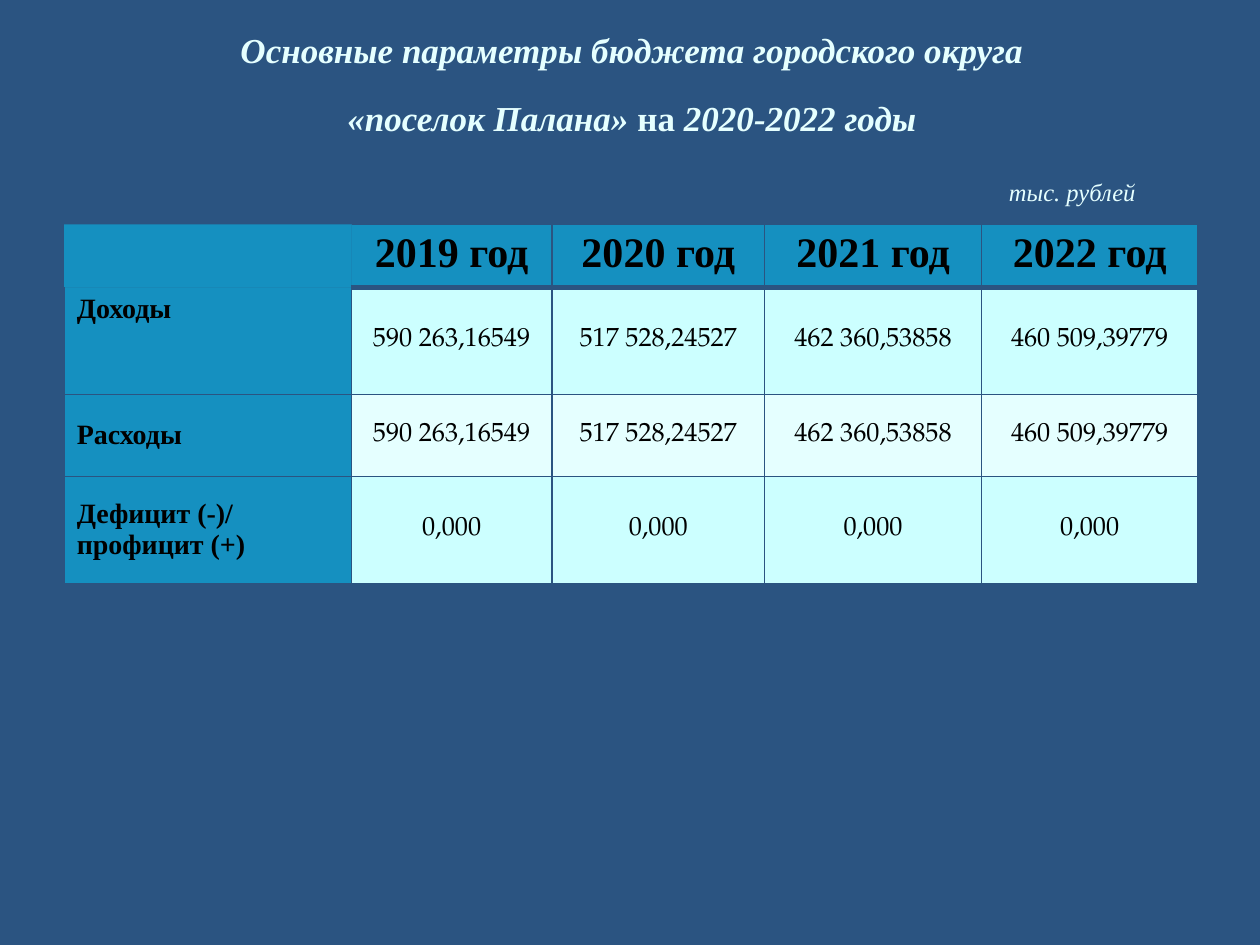
from dataclasses import dataclass

from lxml.etree import SubElement
from pptx import Presentation
from pptx.dml.color import RGBColor
from pptx.enum.text import MSO_ANCHOR, PP_ALIGN
from pptx.oxml.ns import qn
from pptx.util import Inches, Pt


@dataclass(frozen=True)
class Theme:
    background: str = "2B5481"
    light: str = "E5FFFF"
    band: str = "CCFFFF"
    accent: str = "00CCFF"
    ink: str = "000000"
    serif: str = "Times New Roman"
    figures: str = "TeX Gyre Pagella"
    title: int = 20
    unit: int = 14
    header: int = 24
    label: int = 16
    value: int = 15
    leading: int = 39
    thin: int = 1
    thick: int = 3


T = Theme()
NO_STYLE = "{2D5ABB26-0587-4C30-8999-92F81FD0307C}"
TITLE = {"name": T.serif, "size": Pt(T.title), "bold": True, "italic": True}
UPRIGHT = TITLE | {"italic": False}
UNIT = TITLE | {"size": Pt(T.unit), "bold": False}
HEADER = {"name": T.serif, "size": Pt(T.header), "bold": True}
LABEL = HEADER | {"size": Pt(T.label)}
VALUE = {"name": T.figures, "size": Pt(T.value), "bold": False}

HEADING = [
    (PP_ALIGN.CENTER, 0, [("Основные параметры бюджета городского округа", TITLE)]),
    (PP_ALIGN.CENTER, 0, [("«поселок Палана»", TITLE), (" на ", UPRIGHT),
                          ("2020-2022 годы", TITLE)]),
    (PP_ALIGN.LEFT, 7.23, [("тыс. рублей", UNIT)]),
]
TOTALS = ["590 263,16549", "517 528,24527", "462 360,53858", "460 509,39779"]
ROWS = [
    ["", "2019 год", "2020 год", "2021 год", "2022 год"],
    ["Доходы", *TOTALS],
    ["Расходы", *TOTALS],
    ["Дефицит (-)/\nпрофицит (+)", *["0,000"] * 4],
]
COL_WIDTHS = [2.28, 1.59, 1.69, 1.72, 1.72]
ROW_HEIGHTS = [0.5, 0.85, 0.65, 0.85]


def add_run(p, text, formats, color):
    r = p.add_run()
    r.text = text
    for name, value in formats.items():
        setattr(r.font, name, value)
    r.font.color.rgb = RGBColor.from_string(color)


def add_heading(slide, box):
    tf = slide.shapes.add_textbox(*map(Inches, box)).text_frame
    tf.word_wrap = True
    tf.vertical_anchor = MSO_ANCHOR.BOTTOM
    for i, (align, indent, runs) in enumerate(HEADING):
        p = tf.add_paragraph() if i else tf.paragraphs[0]
        p.alignment = align
        p.line_spacing = Pt(T.leading)
        if indent:
            p._p.get_or_add_pPr().set("marL", str(Inches(indent)))
        for text, formats in runs:
            add_run(p, text, formats, T.light)


def set_borders(cell, row, col):
    tc_pr = cell._tc.get_or_add_tcPr()
    corner = row == col == 0
    widths = {"lnL": T.thin, "lnR": T.thin,
              "lnT": T.thick if row == 1 and col else T.thin,
              "lnB": T.thick if row == 0 else T.thin}
    for side, width in widths.items():
        hidden = corner or (row == 1 and col == 0 and side == "lnT") or (
            row == 0 and col == 1 and side == "lnL")
        ln = SubElement(tc_pr, qn(f"a:{side}"), w=str(Pt(width)))
        fill = SubElement(ln, qn("a:noFill" if hidden else "a:solidFill"))
        if not hidden:
            SubElement(fill, qn("a:srgbClr"), val=T.background)


def set_fill(cell, row, col):
    accented = row == 0 or col == 0
    color = T.accent if accented else T.light if row == 2 else T.band
    cell.fill.solid()
    cell.fill.fore_color.rgb = RGBColor.from_string(color)
    if accented:
        clr = cell._tc.tcPr.find(f"{qn('a:solidFill')}/{qn('a:srgbClr')}")
        SubElement(clr, qn("a:alpha"), val="50000")


def fill_cell(cell, text, row, col):
    set_borders(cell, row, col)
    set_fill(cell, row, col)
    top = row == 0 or (row == 1 and col == 0)
    cell.vertical_anchor = MSO_ANCHOR.TOP if top else MSO_ANCHOR.MIDDLE
    formats = HEADER if row == 0 else VALUE if col else LABEL
    tf = cell.text_frame
    for i, line in enumerate(text.splitlines()):
        p = tf.add_paragraph() if i else tf.paragraphs[0]
        p.alignment = PP_ALIGN.CENTER if col else PP_ALIGN.LEFT
        add_run(p, line, formats, T.ink)


def add_budget_table(slide, box):
    frame = slide.shapes.add_table(len(ROWS), len(COL_WIDTHS), *map(Inches, box))
    table = frame.table
    table._tbl.tblPr.find(qn("a:tableStyleId")).text = NO_STYLE
    for column, width in zip(table.columns, COL_WIDTHS):
        column.width = Inches(width)
    for row, height in zip(table.rows, ROW_HEIGHTS):
        row.height = Inches(height)
    for i, texts in enumerate(ROWS):
        for j, text in enumerate(texts):
            fill_cell(table.cell(i, j), text, i, j)


def main():
    prs = Presentation()
    prs.slide_width, prs.slide_height = Inches(10), Inches(7.5)
    slide = prs.slides.add_slide(prs.slide_layouts[6])
    slide.background.fill.solid()
    slide.background.fill.fore_color.rgb = RGBColor.from_string(T.background)
    add_heading(slide, (0.68, 0.65, 8.67, 1.04))
    add_budget_table(slide, (0.51, 1.78, 9, 2.85))
    prs.save("out.pptx")


if __name__ == "__main__":
    main()
